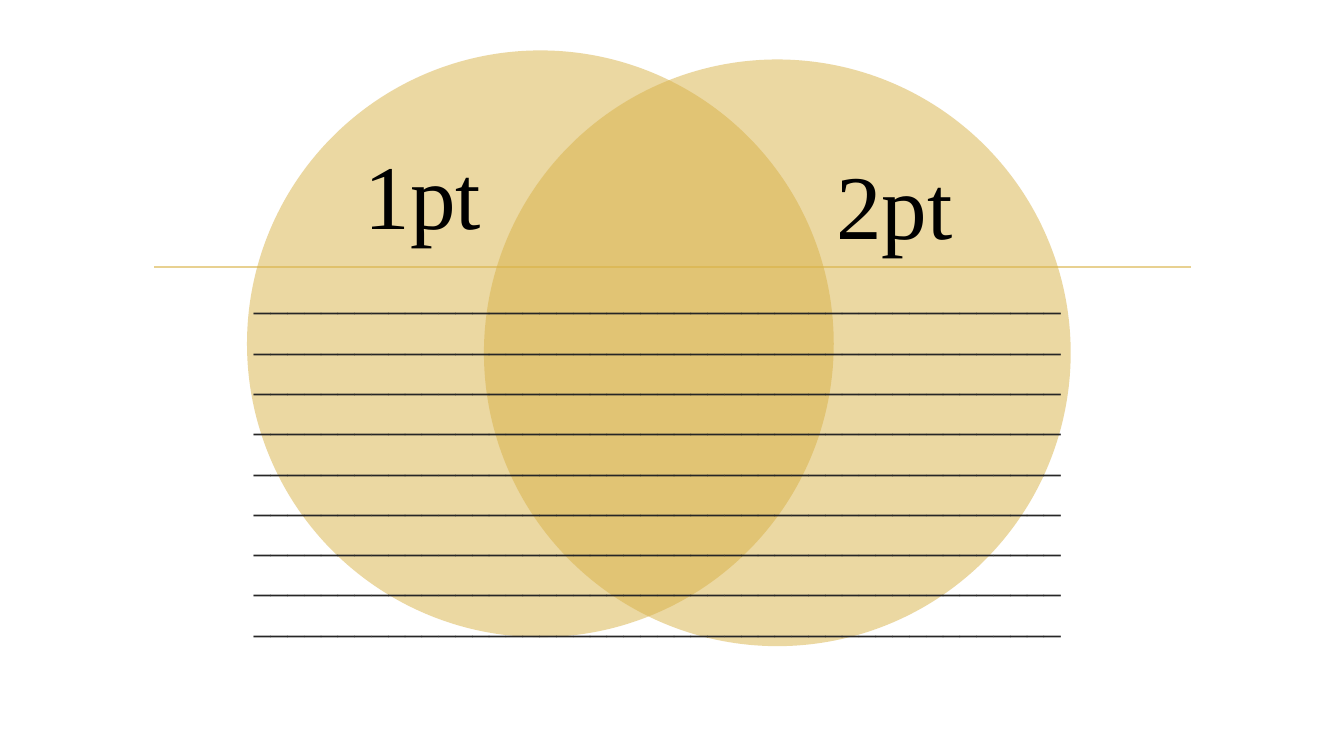
from lxml import etree
from pptx import Presentation
from pptx import util as u
from pptx.dml.color import RGBColor
from pptx.enum import shapes, text
from pptx.oxml.ns import qn

CIRCLE_WIDTH, CIRCLE_HEIGHT = 43.66, 77.6
LABEL_WIDTH, LABEL_HEIGHT = 30.91, 54.93
RULES, RULE_CHARACTERS = 9, 48


def color(hex_string):
    return RGBColor.from_string(hex_string)


def write(frame, content, size, ink, font, align=text.PP_ALIGN.LEFT,
          line_spacing=1.0, space_after=0):
    paragraph = frame.paragraphs[0]
    paragraph.alignment = align
    paragraph.line_spacing = line_spacing
    paragraph.space_before = u.Pt(0)
    paragraph.space_after = u.Pt(space_after)
    run = paragraph.add_run()
    run.text = content
    run.font.name = font
    run.font.size = u.Pt(size)
    run.font.color.rgb = color(ink)


class VennSlide:
    """Draws on one slide; every place and size is a percentage of the slide."""

    font = "Times New Roman"
    gold, pale_gold = "D9B247", "E8D191"
    label_ink, rule_ink = "000000", "262626"

    def __init__(self, presentation):
        self.width = presentation.slide_width
        self.height = presentation.slide_height
        self.slide = presentation.slides.add_slide(presentation.slide_layouts[6])

    def place(self, x, y):
        return round(self.width * x / 100), round(self.height * y / 100)

    def divider(self, left, right, y):
        line = self.slide.shapes.add_connector(
            shapes.MSO_CONNECTOR.STRAIGHT, *self.place(left, y), *self.place(right, y))
        line.line.color.rgb = color(self.pale_gold)
        line.line.width = u.Pt(1.25)
        etree.SubElement(line._element.spPr, qn("a:effectLst"))

    def circle(self, left, top, opacity=50):
        shape = self.slide.shapes.add_shape(
            shapes.MSO_SHAPE.OVAL, *self.place(left, top),
            *self.place(CIRCLE_WIDTH, CIRCLE_HEIGHT))
        shape.shadow.inherit = False
        shape.fill.solid()
        shape.fill.fore_color.rgb = color(self.gold)
        shape.line.fill.background()
        fill_color = shape._element.spPr.find(qn("a:solidFill")).find(qn("a:srgbClr"))
        etree.SubElement(fill_color, qn("a:alpha"), val=str(opacity * 1000))

    def text_box(self, left, top, width, height, inset_x=0.1, inset_y=0.05):
        box = self.slide.shapes.add_textbox(
            *self.place(left, top), *self.place(width, height))
        frame = box.text_frame
        frame.word_wrap = True
        frame.vertical_anchor = text.MSO_ANCHOR.TOP
        frame.margin_left = frame.margin_right = u.Inches(inset_x)
        frame.margin_top = frame.margin_bottom = u.Inches(inset_y)
        return frame

    def labelled_circle(self, left, top, label, align):
        self.circle(left, top)
        frame = self.text_box(left + (CIRCLE_WIDTH - LABEL_WIDTH) / 2,
                              top + (CIRCLE_HEIGHT - LABEL_HEIGHT) / 2,
                              LABEL_WIDTH, LABEL_HEIGHT, 0.32, 0.09)
        write(frame, label, 65, self.label_ink, self.font, align, line_spacing=0.97)

    def writing_rules(self, left, top, width, height):
        """One run of underscores that wraps into evenly spaced rules."""
        frame = self.text_box(left, top, width, height)
        write(frame, "_" * (RULES * RULE_CHARACTERS), 24, self.rule_ink, self.font,
              line_spacing=u.Pt(28.8), space_after=6)


def main():
    presentation = Presentation()
    presentation.slide_width = u.Inches(13.33)
    presentation.slide_height = u.Inches(7.5)
    venn = VennSlide(presentation)
    venn.divider(11.48, 88.6, 35.33)
    venn.labelled_circle(18.38, 6.67, "1pt", text.PP_ALIGN.LEFT)
    venn.labelled_circle(36.01, 7.87, "2pt", text.PP_ALIGN.RIGHT)
    venn.writing_rules(18.15, 36, 61.82, 48.27)
    presentation.save("out.pptx")


if __name__ == "__main__":
    main()
